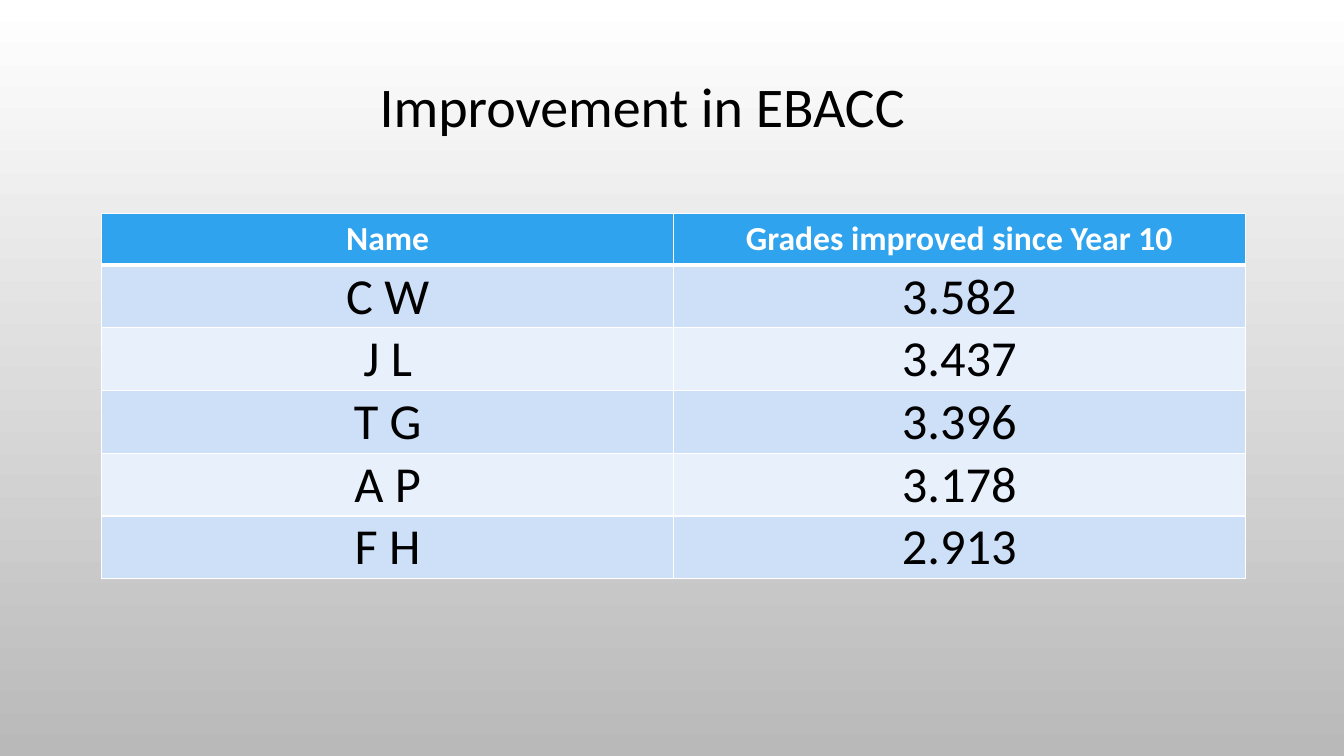
import pptx
import pptx.dml.color
import pptx.enum.text
import pptx.oxml.ns
import pptx.util
from lxml import etree
from pptx.util import Inches

COLORS = {
    "white": "FFFFFF",
    "grey": "B9B9B9",
    "header": "2FA3EE",
    "band_dark": "CDE0F8",
    "band_light": "E8F0FC",
    "black": "000000",
}
ROWS = [
    ("Name", "Grades improved since Year 10"),
    ("C W", "3.582"),
    ("J L", "3.437"),
    ("T G", "3.396"),
    ("A P", "3.178"),
    ("F H", "2.913"),
]
HEADER_HEIGHT, ROW_HEIGHT, COLUMN_WIDTH = 0.51, 0.62, 5.67


def format_text(paragraph, size, color, bold=False):
    paragraph.alignment = pptx.enum.text.PP_ALIGN.CENTER
    font = paragraph.runs[0].font
    font.name = "Calibri"
    font.size = pptx.util.Pt(size)
    font.bold = bold
    font.color.rgb = pptx.dml.color.RGBColor.from_string(COLORS[color])


def add_borders(cell, bottom_width):
    """Draw white borders, one point wide except at the bottom."""
    properties = cell._tc.get_or_add_tcPr()
    for position, side in enumerate(("lnL", "lnR", "lnT", "lnB")):
        width = bottom_width if side == "lnB" else 1
        line = etree.Element(pptx.oxml.ns.qn(f"a:{side}"), w=str(pptx.util.Pt(width)))
        fill = etree.SubElement(line, pptx.oxml.ns.qn("a:solidFill"))
        etree.SubElement(fill, pptx.oxml.ns.qn("a:srgbClr"), val=COLORS["white"])
        properties.insert(position, line)


presentation = pptx.Presentation()
presentation.slide_width = Inches(13.33)
presentation.slide_height = Inches(7.5)
slide = presentation.slides.add_slide(presentation.slide_layouts[6])

# Background: white at the top to grey at the bottom
background = slide.background.fill
background.gradient()
background.gradient_angle = 270
for stop, position, color in zip(background.gradient_stops, (0, 1), ("white", "grey")):
    stop.position = position
    stop.color.rgb = pptx.dml.color.RGBColor.from_string(COLORS[color])

# Table of improved grades
table = slide.shapes.add_table(
    len(ROWS), 2, Inches(1.01), Inches(2.12), Inches(2 * COLUMN_WIDTH),
    Inches(HEADER_HEIGHT + ROW_HEIGHT * (len(ROWS) - 1))).table
for column in table.columns:
    column.width = Inches(COLUMN_WIDTH)

for row_index, values in enumerate(ROWS):
    is_header = row_index == 0
    table.rows[row_index].height = Inches(HEADER_HEIGHT if is_header else ROW_HEIGHT)
    band = "header" if is_header else "band_dark" if row_index % 2 else "band_light"
    for column_index, value in enumerate(values):
        cell = table.cell(row_index, column_index)
        cell.text_frame.text = value
        cell.fill.solid()
        cell.fill.fore_color.rgb = pptx.dml.color.RGBColor.from_string(COLORS[band])
        add_borders(cell, 3 if is_header else 1)
        paragraph = cell.text_frame.paragraphs[0]
        if is_header:
            format_text(paragraph, 24, "white", bold=True)
        else:
            format_text(paragraph, 36, "black")
            cell.vertical_anchor = pptx.enum.text.MSO_ANCHOR.BOTTOM
            cell.margin_left = cell.margin_right = cell.margin_top = Inches(0.01)
            cell.margin_bottom = 0

# Title
title = slide.shapes.add_textbox(Inches(2.04), Inches(0.66), Inches(8.66), Inches(0.77))
title.text_frame.word_wrap = True
title.text_frame.auto_size = pptx.enum.text.MSO_AUTO_SIZE.SHAPE_TO_FIT_TEXT
title.text_frame.text = "Improvement in EBACC"
format_text(title.text_frame.paragraphs[0], 40, "black")

presentation.save("out.pptx")
